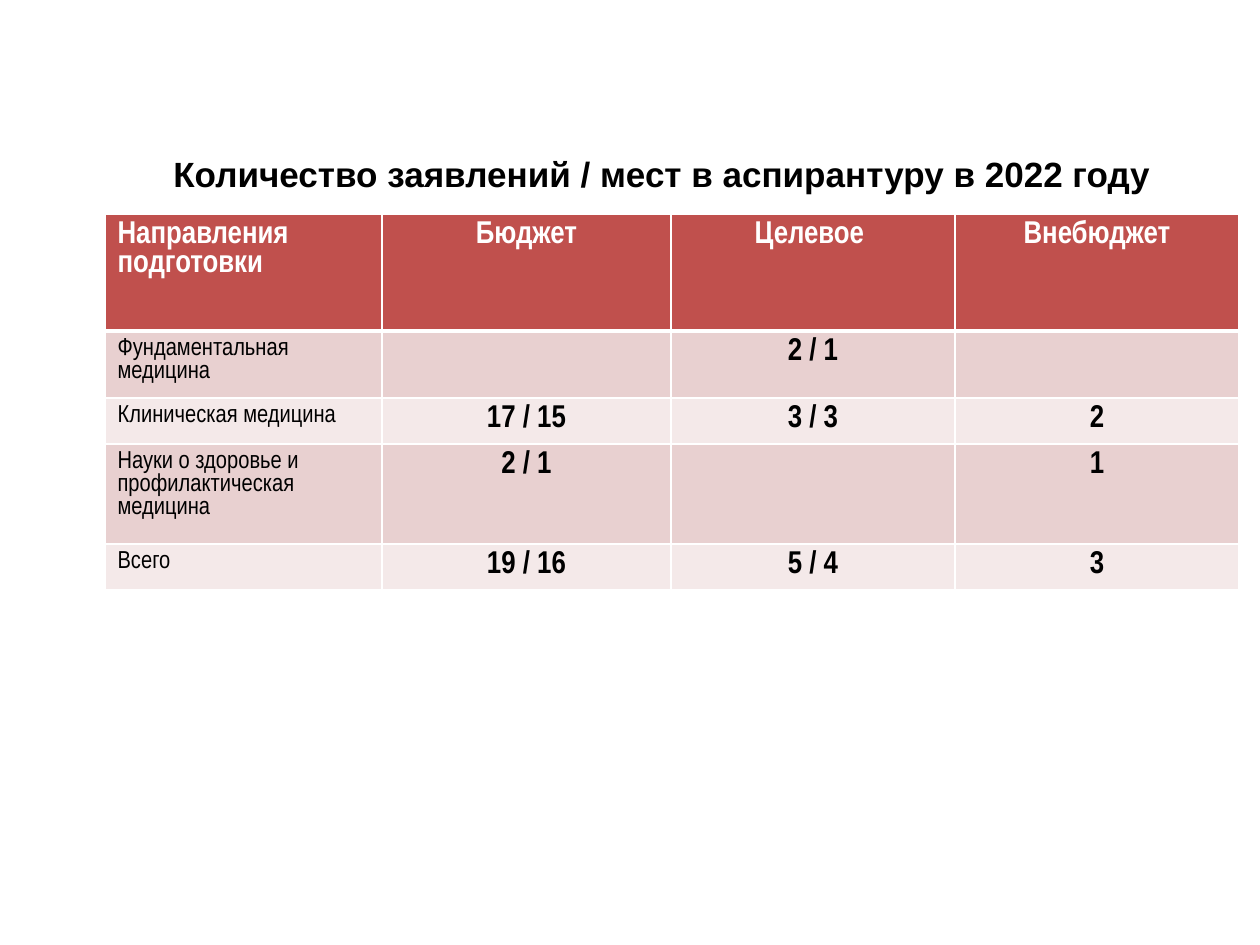
from pptx import Presentation
from pptx.dml.color import RGBColor
from pptx.enum.text import MSO_ANCHOR as Anchor, PP_ALIGN as Align
from pptx.oxml import parse_xml
from pptx.oxml.ns import nsdecls
from pptx.util import Emu, Pt

EMU_PER_PX = 914400 / 126

BLACK = RGBColor(0x00, 0x00, 0x00)
WHITE = RGBColor(0xFF, 0xFF, 0xFF)
RED = RGBColor(0xC0, 0x50, 0x4D)
BANDS = (RGBColor(0xE8, 0xD0, 0xD0), RGBColor(0xF4, 0xE9, 0xE9))

TITLE = "Количество заявлений / мест в аспирантуру в 2022 году"
ROWS = (
    ("Направления подготовки", "Бюджет", "Целевое ", "Внебюджет"),
    ("Фундаментальная медицина", "", "2 / 1", ""),
    ("Клиническая медицина", "17 / 15", "3 / 3", "2"),
    ("Науки о здоровье и профилактическая медицина", "2 / 1", "", "1"),
    ("Всего", "19 / 16", "5 / 4", "3"),
)
COLUMN_WIDTHS = (277, 289, 284, 284)
ROW_HEIGHTS = (117, 67, 46, 100, 46)

TITLE_FORMAT = {"name": "Arial", "size": Pt(20), "bold": True}
STRONG_FORMAT = {"name": "Arial Narrow", "size": Pt(18), "bold": True}
LABEL_FORMAT = {"name": "Arial Narrow", "size": Pt(14), "bold": False}


def px(length):
    return Emu(round(length * EMU_PER_PX))


def write(text_frame, text, font_format, color, alignment):
    paragraph = text_frame.paragraphs[0]
    paragraph.alignment = alignment
    run = paragraph.add_run()
    run.text = text
    for name, value in font_format.items():
        setattr(run.font, name, value)
    run.font.color.rgb = color


def set_borders(cell, widths):
    """Draw white borders; widths are points for left, right, top, bottom."""
    properties = cell._tc.get_or_add_tcPr()
    for index, (side, width) in enumerate(zip("LRTB", widths)):
        properties.insert(index, parse_xml(
            f'<a:ln{side} {nsdecls("a")} w="{Pt(width)}"><a:solidFill>'
            f'<a:srgbClr val="{WHITE}"/></a:solidFill></a:ln{side}>'))


def add_title(slide):
    title = slide.shapes.title
    title.left, title.top, title.width, title.height = map(px, (95, 125, 1134, 97))
    title.text_frame.vertical_anchor = Anchor.MIDDLE
    write(title.text_frame, TITLE, TITLE_FORMAT, BLACK, Align.CENTER)


def fill_cell(cell, text, row, column):
    is_header = row == 0
    cell.fill.solid()
    cell.fill.fore_color.rgb = RED if is_header else BANDS[(row - 1) % 2]
    set_borders(cell, (1, 1, 3 if row == 1 else 1, 3 if is_header else 1))
    if text:
        write(cell.text_frame, text,
              STRONG_FORMAT if is_header or column else LABEL_FORMAT,
              WHITE if is_header else BLACK,
              Align.CENTER if column else Align.LEFT)


def add_applications_table(slide):
    frame = slide.shapes.add_table(
        len(ROWS), len(COLUMN_WIDTHS), px(105), px(214),
        px(sum(COLUMN_WIDTHS)), px(sum(ROW_HEIGHTS)))
    table = frame.table
    for column, width in zip(table.columns, COLUMN_WIDTHS):
        column.width = px(width)
    for row, height in zip(table.rows, ROW_HEIGHTS):
        row.height = px(height)
    for row, texts in enumerate(ROWS):
        for column, text in enumerate(texts):
            fill_cell(table.cell(row, column), text, row, column)


def main():
    presentation = Presentation()
    presentation.slide_width = px(1260)
    presentation.slide_height = px(945)
    slide = presentation.slides.add_slide(presentation.slide_layouts[5])
    add_title(slide)
    add_applications_table(slide)
    presentation.save("out.pptx")


if __name__ == "__main__":
    main()
